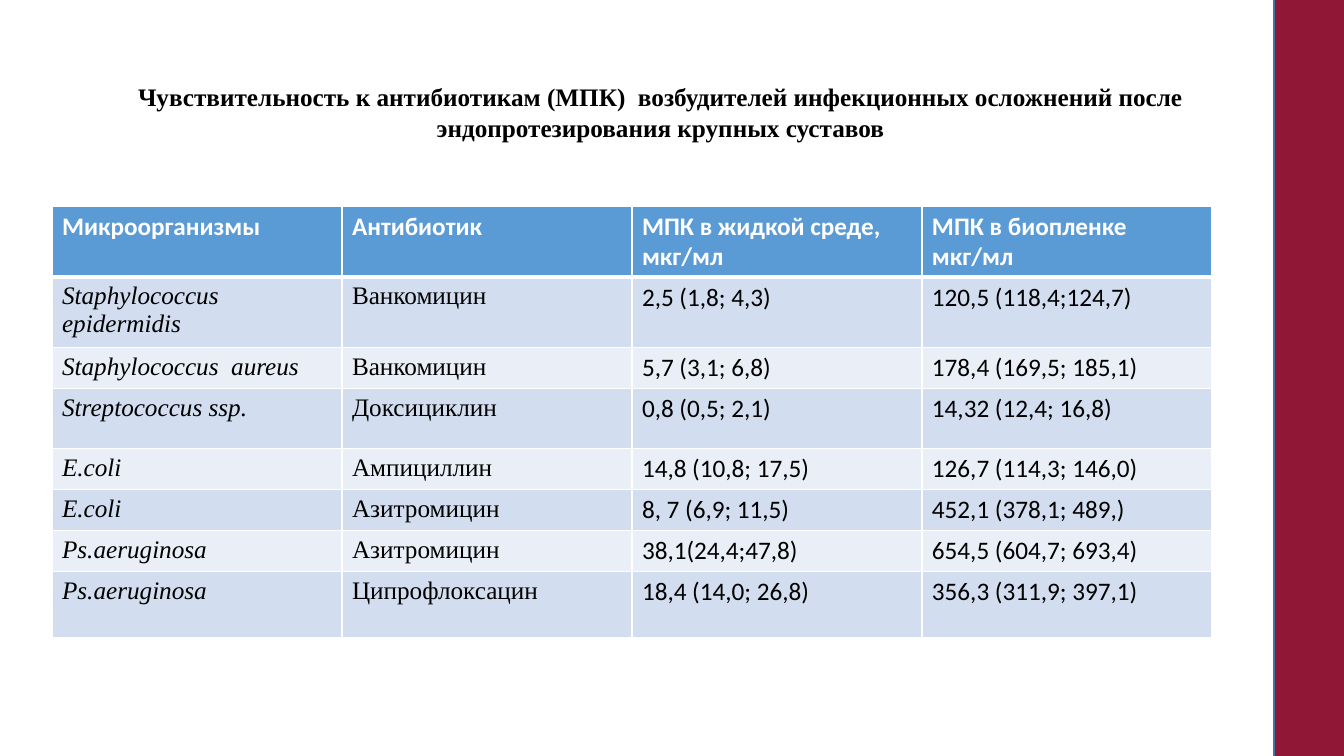
from typing import NamedTuple

from lxml.etree import SubElement
from pptx import Presentation
from pptx.dml.color import RGBColor
from pptx.enum.shapes import MSO_SHAPE
from pptx.enum.text import MSO_ANCHOR, PP_ALIGN
from pptx.oxml.ns import qn
from pptx.util import Emu, Pt

SERIF, SANS = "Times New Roman", "Calibri"
BLACK, WHITE = "000000", "FFFFFF"
HEADER_FILL, BAND_FILLS = "5B9BD5", ("D2DEEF", "EAEFF7")


class Sensitivity(NamedTuple):
    microbe: str
    antibiotic: str
    mic_liquid: str
    mic_biofilm: str
    height: int


HEADER = Sensitivity("Микроорганизмы", "Антибиотик", "МПК в жидкой среде, мкг/мл",
                     "МПК в биопленке мкг/мл", 71)
RESULTS = [
    Sensitivity("Staphylococcus epidermidis", "Ванкомицин", "2,5 (1,8; 4,3)",
                "120,5 (118,4;124,7)", 66),
    Sensitivity("Staphylococcus  aureus", "Ванкомицин", "5,7 (3,1; 6,8)",
                "178,4 (169,5; 185,1)", 41),
    Sensitivity("Streptococcus ssp.", "Доксициклин", "0,8 (0,5; 2,1)",
                "14,32 (12,4; 16,8)", 60),
    Sensitivity("E.coli", "Ампициллин", "14,8 (10,8; 17,5)", "126,7 (114,3; 146,0)", 41),
    Sensitivity("E.coli", "Азитромицин", "8, 7 (6,9; 11,5)", "452,1 (378,1; 489,)", 41),
    Sensitivity("Ps.aeruginosa", "Азитромицин", "38,1(24,4;47,8)",
                "654,5 (604,7; 693,4)", 41),
    Sensitivity("Ps.aeruginosa", "Ципрофлоксацин", "18,4 (14,0; 26,8)",
                "356,3 (311,9; 397,1)", 66),
]


def px(n: int) -> Emu:
    return Emu(round(n * 914400 / 100.8))


def rgb(color: str) -> RGBColor:
    return RGBColor.from_string(color)


def write(tf, text: str, *, font: str = SANS, color: str = BLACK, bold: bool = False,
          italic: bool = False, align: PP_ALIGN = PP_ALIGN.LEFT) -> None:
    tf.word_wrap = True
    p = tf.paragraphs[0]
    p.alignment = align
    r = p.add_run()
    r.text = text
    r.font.name, r.font.size = font, Pt(18)
    r.font.bold, r.font.italic = bold, italic
    r.font.color.rgb = rgb(color)


def set_borders(cell, top: int, bottom: int) -> None:
    tc_pr = cell._tc.get_or_add_tcPr()
    for side, width in (("L", 1), ("R", 1), ("T", top), ("B", bottom)):
        ln = SubElement(tc_pr, qn(f"a:ln{side}"), w=str(Pt(width)))
        fill = SubElement(ln, qn("a:solidFill"))
        SubElement(fill, qn("a:srgbClr"), val=WHITE)


def add_title(slide, text: str) -> None:
    tf = slide.shapes.add_textbox(px(81), px(39), px(1159), px(146)).text_frame
    tf.vertical_anchor = MSO_ANCHOR.MIDDLE
    write(tf, text, font=SERIF, bold=True, align=PP_ALIGN.CENTER)


def add_results(slide, rows: list[Sensitivity]) -> None:
    columns = len(HEADER) - 1
    height = sum(row.height for row in rows)
    table = slide.shapes.add_table(len(rows), columns, px(52), px(206),
                                   px(1160), px(height)).table
    for column in table.columns:
        column.width = px(290)
    for i, row in enumerate(rows):
        table.rows[i].height = px(row.height)
        for j, text in enumerate(row[:columns]):
            cell = table.cell(i, j)
            # The rule under the header is thicker than the grid
            set_borders(cell, top=3 if i == 1 else 1, bottom=3 if i == 0 else 1)
            cell.fill.solid()
            if i == 0:
                cell.fill.fore_color.rgb = rgb(HEADER_FILL)
                write(cell.text_frame, text, color=WHITE, bold=True)
            else:
                cell.fill.fore_color.rgb = rgb(BAND_FILLS[(i - 1) % 2])
                write(cell.text_frame, text, font=SERIF if j < 2 else SANS, italic=j == 0)


def add_side_band(slide) -> None:
    sp = slide.shapes.add_shape(MSO_SHAPE.RECTANGLE, px(1274), px(-8), px(83), px(771))
    sp.shadow.inherit = False
    sp.fill.solid()
    sp.fill.fore_color.rgb = rgb("911737")
    sp.line.color.rgb = rgb("43739E")
    sp.line.width = Pt(1)


def main() -> None:
    prs = Presentation()
    prs.slide_width, prs.slide_height = px(1344), px(756)
    slide = prs.slides.add_slide(prs.slide_layouts[6])
    add_title(slide, "Чувствительность к антибиотикам (МПК)  возбудителей инфекционных "
                     "осложнений после эндопротезирования крупных суставов")
    add_results(slide, [HEADER, *RESULTS])
    add_side_band(slide)
    prs.save("out.pptx")


if __name__ == "__main__":
    main()
